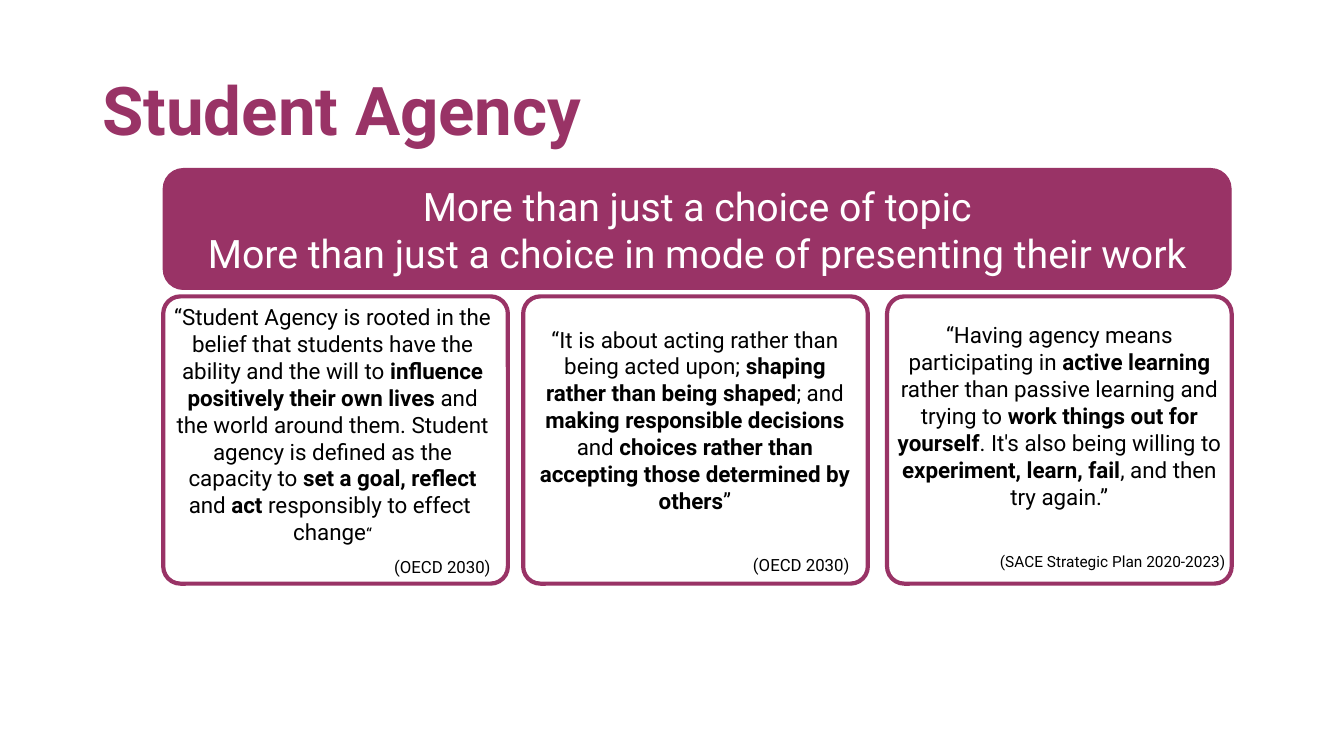
from pptx import Presentation
from pptx import util as u
from pptx.dml.color import RGBColor
from pptx.enum import shapes, text

Pt = u.Pt
PLUM, WHITE, BLACK = "993366", "FFFFFF", "000000"


def colour(hex_code):
    return RGBColor.from_string(hex_code)


class AgencySlide:
    font = "Roboto"

    def __init__(self, deck):
        self.slide = deck.slides.add_slide(deck.slide_layouts[5])

    def add_runs(self, paragraph, runs, ink, align):
        paragraph.alignment = align
        for wording, size, bold in runs:
            run = paragraph.add_run()
            run.text = wording
            run.font.name = self.font
            run.font.size = Pt(size)
            run.font.bold = bold
            run.font.color.rgb = colour(ink)

    def title(self, wording, left, top, width, height):
        heading = self.slide.shapes.title
        heading.left, heading.top = Pt(left), Pt(top)
        heading.width, heading.height = Pt(width), Pt(height)
        frame = heading.text_frame
        frame.vertical_anchor = text.MSO_ANCHOR.MIDDLE
        frame.paragraphs[0].line_spacing = 0.9
        self.add_runs(frame.paragraphs[0], [(wording, 48, True)], PLUM, text.PP_ALIGN.LEFT)

    def box(self, kind, left, top, width, height, line_width, fill=None):
        outline = self.slide.shapes.add_shape(
            kind, Pt(left), Pt(top), Pt(width), Pt(height))
        outline.shadow.inherit = False
        if fill:
            outline.fill.solid()
            outline.fill.fore_color.rgb = colour(fill)
        else:
            outline.fill.background()
        outline.line.color.rgb = colour(PLUM)
        outline.line.width = Pt(line_width)
        return outline

    def banner(self, lines, left, top, width, height):
        band = self.box(shapes.MSO_SHAPE.FLOWCHART_ALTERNATE_PROCESS,
                        left, top, width, height, 0.75, PLUM)
        frame = band.text_frame
        frame.word_wrap = True
        frame.vertical_anchor = text.MSO_ANCHOR.MIDDLE
        for index, line in enumerate(lines):
            paragraph = frame.add_paragraph() if index else frame.paragraphs[0]
            self.add_runs(paragraph, [(line, 28, False)], WHITE, text.PP_ALIGN.CENTER)

    def panel(self, left, top, width, height):
        frame = self.box(shapes.MSO_SHAPE.ROUNDED_RECTANGLE, left, top, width, height, 3)
        frame.adjustments[0] = 0.06

    def quote(self, quotation, source, gap, left, top, width, height):
        holder = self.slide.shapes.add_textbox(Pt(left), Pt(top), Pt(width), Pt(height))
        frame = holder.text_frame
        frame.word_wrap = True
        frame.margin_left = frame.margin_right = 0
        frame.margin_top = frame.margin_bottom = 0
        self.add_runs(frame.paragraphs[0], quotation, BLACK, text.PP_ALIGN.CENTER)
        frame.paragraphs[0].space_after = Pt(gap)
        self.add_runs(frame.add_paragraph(), [source], BLACK, text.PP_ALIGN.RIGHT)


def plain(wording):
    return wording, 16, False


def strong(wording):
    return wording, 16, True


QUOTES = [
    (116.6,
     [plain("“Student Agency is rooted in the belief that students have the ability "
            "and the will to "),
      strong("influence positively their own lives"),
      plain(" and the world around them. Student agency is defined as the capacity to "),
      strong("set a goal, reflect"), plain(" and "), strong("act"),
      plain(" responsibly to effect "), (" ", 12, False), plain("change"),
      ("“", 12, False)],
     ("(OECD 2030) ", 12, False), 8, (121.7, 216.7, 231.8, 190)),
    (373.7,
     [plain("“It is about acting rather than being acted upon; "),
      strong("shaping rather than being shaped"), plain("; and "),
      strong("making responsible decisions"), plain(" and "),
      strong("choices rather than accepting those determined by others"), plain("”")],
     ("(OECD 2030) ", 12, False), 29, (383, 232.6, 226.8, 178)),
    (633.6,
     [plain("“Having agency means participating in "), strong("active learning "),
      plain("rather than passive learning and trying to "),
      strong("work things out for yourself"),
      plain(". It's also being willing to "),
      strong("experiment, learn, fail"), plain(", and then try again.”")],
     ("(SACE Strategic Plan 2020-2023)", 11, False), 30.5, (637.9, 229.7, 237.6, 180)),
]


def main():
    deck = Presentation()
    deck.slide_width, deck.slide_height = Pt(960), Pt(540)
    page = AgencySlide(deck)
    for panel_left, quotation, source, gap, place in QUOTES:
        page.panel(panel_left, 211.7, 246.2, 205.2)
        page.quote(quotation, source, gap, *place)
    page.title("Student Agency", 66, 28.8, 828, 104.4)
    page.banner(["More than just a choice of topic",
                 "More than just a choice in mode of presenting their work"],
                116.6, 120.4, 762.8, 86.4)
    deck.save("out.pptx")


if __name__ == "__main__":
    main()
